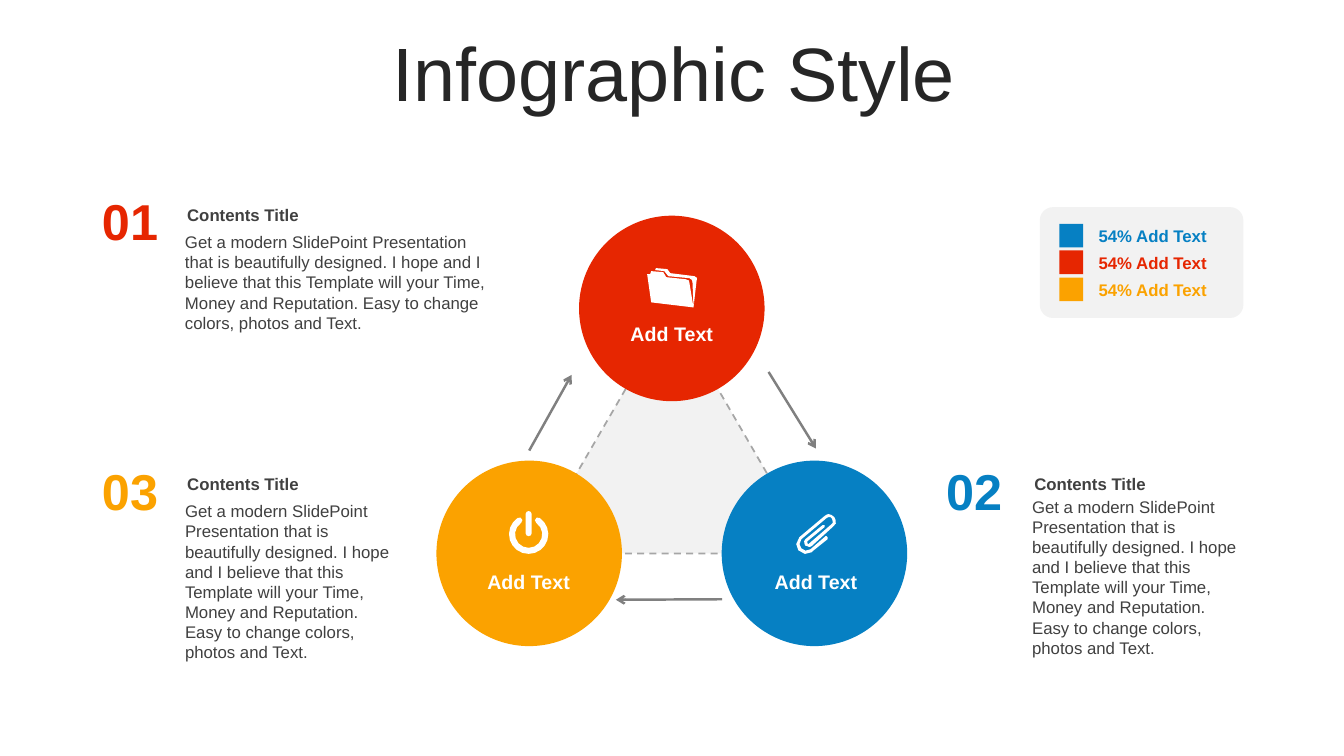
from math import cos, radians, sin
from lxml.etree import SubElement
from pptx import Presentation
from pptx.dml.color import RGBColor
from pptx.enum.dml import MSO_LINE
from pptx.enum.shapes import MSO_CONNECTOR, MSO_SHAPE
from pptx.enum.text import MSO_ANCHOR, MSO_AUTO_SIZE, PP_ALIGN
from pptx.oxml.ns import qn
from pptx.util import Inches, Pt

theme = {
    "font": "Arial",
    "red": "E62601", "gold": "FBA200", "blue": "0680C3",
    "white": "FFFFFF", "pale": "F2F2F2", "dash": "A6A6A6",
    "arrow": "808080", "ink": "404040", "head": "262626",
    "title": 54, "number": 36, "label": 14, "body": 12,
}
cell = Inches(0.1)
cols, rows = 133.33, 75

deck = Presentation()
deck.slide_width, deck.slide_height = int(cols * cell), int(rows * cell)
slide = deck.slides.add_slide(deck.slide_layouts[5])
shapes = slide.shapes


def color(name):
    return RGBColor.from_string(theme[name])


def write(box, text, size, tint, bold=True, align=PP_ALIGN.LEFT, side=1, holder=None):
    left, top, wide, high = [int(n * cell) for n in box]
    item = holder or shapes.add_textbox(left, top, wide, high)
    item.left, item.top, item.width, item.height = left, top, wide, high
    frame = item.text_frame
    frame.text = text
    frame.word_wrap = True
    frame.auto_size = MSO_AUTO_SIZE.NONE if holder else MSO_AUTO_SIZE.SHAPE_TO_FIT_TEXT
    frame.vertical_anchor = MSO_ANCHOR.MIDDLE if holder else MSO_ANCHOR.TOP
    frame.margin_left = frame.margin_right = int(side * cell)
    line = frame.paragraphs[0]
    line.alignment = align
    font = line.runs[0].font
    font.name, font.size, font.bold = theme["font"], Pt(theme[size]), bold
    font.color.rgb = color(tint)
    return line


title = write((3.55, 3.7, 126.6, 7.9), "Infographic Style", "title", "head",
              False, PP_ALIGN.CENTER, holder=shapes.title)
title.line_spacing = 0.9
title.space_before = Pt(10)

discs = [("red", 57.45, 21.4, 59, 31.4), ("gold", 43.3, 45.7, 44.8, 56),
         ("blue", 71.6, 45.7, 73.3, 56)]
keys = [("blue", 22.2), ("red", 24.85), ("gold", 27.53)]
blocks = [(MSO_SHAPE.ISOSCELES_TRIANGLE, (52.6, 30.7, 28.1, 24.2), "pale")]
blocks += [(MSO_SHAPE.OVAL, (x, y, 18.4, 18.4), tint) for tint, x, y, _, _ in discs]
blocks += [(MSO_SHAPE.ROUNDED_RECTANGLE, (103.15, 20.55, 20.2, 11), "pale")]
blocks += [(MSO_SHAPE.RECTANGLE, (105.1, y, 2.35, 2.35), tint) for tint, y in keys]
for kind, box, tint in blocks:
    block = shapes.add_shape(kind, *[int(n * cell) for n in box])
    block.shadow.inherit = False
    block.fill.solid()
    block.fill.fore_color.rgb = color(tint)
    if kind == MSO_SHAPE.ISOSCELES_TRIANGLE:
        block.line.color.rgb = color("dash")
        block.line.width = Pt(1.25)
        block.line.dash_style = MSO_LINE.DASH
    else:
        block.line.fill.background()
    if kind == MSO_SHAPE.ROUNDED_RECTANGLE:
        block.adjustments[0] = 0.12

for ends in [(52.5, 44.7, 56.7, 37.2), (76.25, 36.9, 80.95, 44.5), (71.65, 59.45, 61.1, 59.5)]:
    arrow = shapes.add_connector(MSO_CONNECTOR.STRAIGHT, *[int(n * cell) for n in ends])
    arrow.line.color.rgb = color("arrow")
    arrow.line.width = Pt(1.75)
    props = arrow.element.spPr
    SubElement(props.find(qn("a:ln")), qn("a:tailEnd"), type="arrow")
    SubElement(props, qn("a:effectLst"))

for tint, _, _, x, y in discs:
    write((x, y, 15.3, 3.4), "Add Text", "label", "white", align=PP_ALIGN.CENTER)
for tint, y in keys:
    write((108, y - 0.3, 13.3, 3), "54% Add Text", "body", tint)

story = ("Get a modern SlidePoint Presentation that is beautifully designed. "
         "I hope and I believe that this Template will your Time, Money and "
         "Reputation. Easy to change colors, photos and Text.")
notes = [
    ("01", "red", 8.9, 17.37, 18.4, 32.3, 22.5, 11.1),
    ("03", "gold", 8.9, 17.37, 45.13, 22.8, 49.2, 17.2),
    ("02", "blue", 92.65, 101.4, 45.13, 22.8, 48.75, 17.2),
]
for mark, tint, edge, left, top, wide, low, high in notes:
    write((edge, top, 8, 7.1), mark, "number", tint, align=PP_ALIGN.CENTER)
    write((left, low, wide, high), story, "body", "ink", False)
    write((left, top + 1.38, wide, 3), "Contents Title", "body", "ink", side=1.2)

folder = [
    [(646, 269), (658, 270), (661, 275), (680, 277), (684, 277, 684, 279, 684, 281),
     (688, 305), (646, 300), (642, 272), (645, 272)],
    [(651, 266), (662, 267), (665, 271), (689, 274), (692, 275, 692, 276, 691, 279),
     (688, 305), (687, 280), (687, 278, 686, 277, 684, 276), (663, 274), (659, 269),
     (650, 268), (650, 267, 650, 267, 651, 266)],
]
clip = [[
    (822, 510), (825, 511), (827, 512, 829, 514, 829, 516),
    (830, 518, 829, 521, 827, 522), (805, 542), (804, 543, 802, 543, 801, 542),
    (799, 542, 798, 541, 798, 539), (797, 538, 798, 536, 799, 535), (816, 521),
    (818, 521), (818, 523), (801, 537), (801, 539), (802, 540), (803, 539), (825, 520),
    (826, 519, 827, 518, 826, 517), (826, 515, 825, 514, 824, 513),
    (822, 513, 821, 513, 820, 514), (795, 535), (793, 538, 792, 542, 795, 544),
    (797, 547, 801, 547, 804, 545), (819, 532), (820, 532), (821, 533), (821, 535),
    (806, 547), (805, 548), (801, 551, 796, 550, 792, 546),
    (789, 543, 789, 537, 793, 533), (818, 512), (819, 511, 821, 510, 822, 510),
]]
ring = [(524.5, 530, 19.5, 34, 326, 16), (515.3, 516.3, 3, 326, 506, 3),
        (524.5, 530, 13.5, 326, 34, 12), (533.7, 516.3, 3, 214, 394, 3)]
bar = [(524.5, 510, 3, -90, 90, 4), (524.5, 529, 3, 90, 270, 4)]
power = []
for arcs in (ring, bar):
    power.append([])
    for x, y, size, first, last, steps in arcs:
        for step in range(steps + 1):
            turn = radians(first + (last - first) * step / steps)
            power[-1].append((x + size * sin(turn), y - size * cos(turn)))

for icon in (power, clip, folder):
    pen = None
    for path in icon:
        dots = []
        for part in path:
            if len(part) == 2:
                dots.append(part)
                continue
            knots = [dots[-1], part[:2], part[2:4], part[4:]]
            for t in (0.5, 1):
                share = [(1 - t) ** 3, 3 * t * (1 - t) ** 2, 3 * t * t * (1 - t), t ** 3]
                dots.append(tuple(sum(s * k[i] for s, k in zip(share, knots)) for i in (0, 1)))
        dots = [(x * cell / 10, y * cell / 10) for x, y in dots]
        if pen is None:
            pen = shapes.build_freeform(*dots[0])
        else:
            pen.move_to(*dots[0])
        pen.add_line_segments(dots[1:], close=True)
    glyph = pen.convert_to_shape()
    glyph.shadow.inherit = False
    glyph.fill.solid()
    glyph.fill.fore_color.rgb = color("white")
    glyph.line.fill.background()

deck.save("out.pptx")
